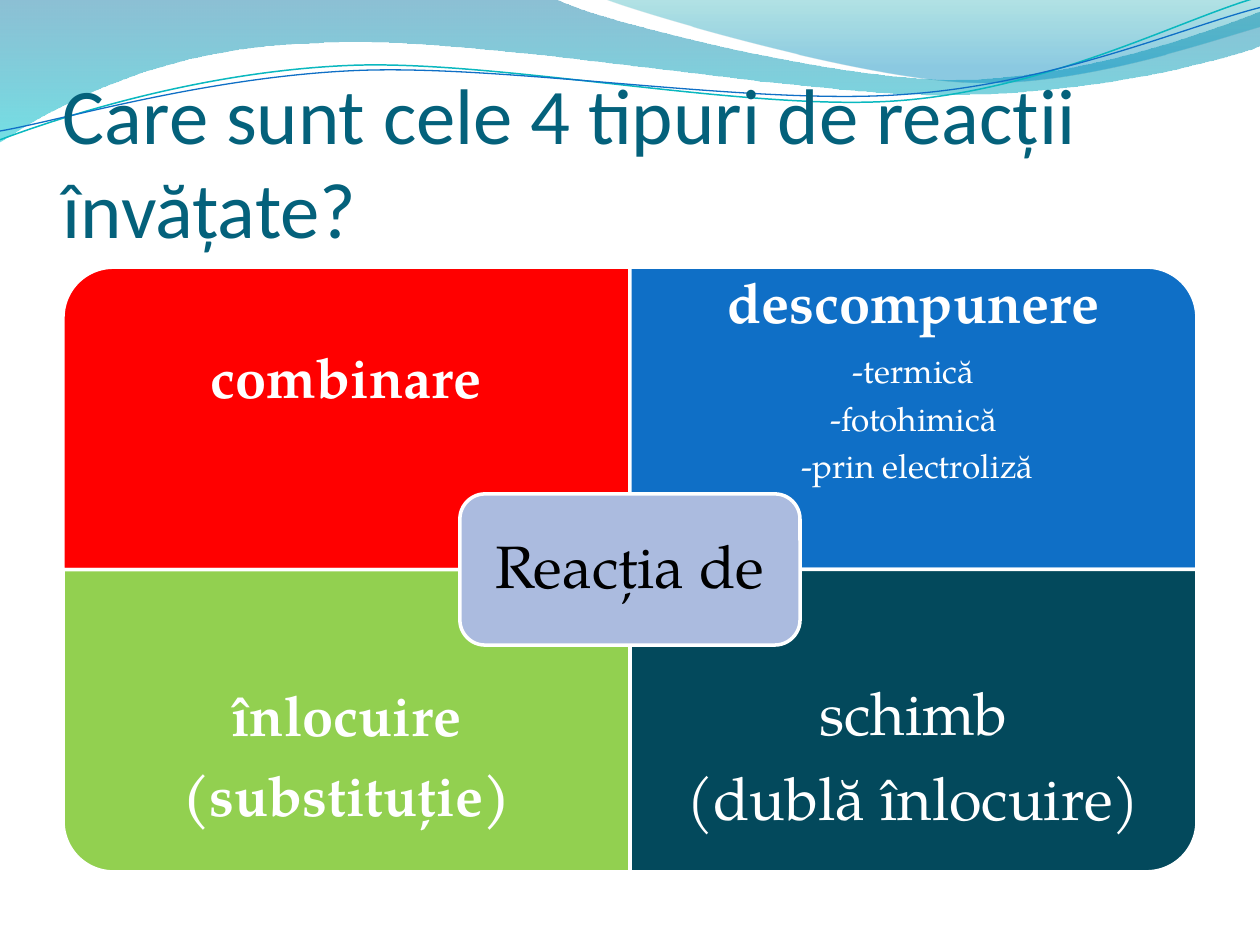
from dataclasses import dataclass

from lxml import etree
from pptx import Presentation
from pptx.dml.color import RGBColor
from pptx.enum.shapes import MSO_SHAPE
from pptx.enum.text import MSO_ANCHOR, PP_ALIGN
from pptx.oxml.ns import qn
from pptx.util import Inches, Pt

ROUND_ONE = MSO_SHAPE.ROUND_1_RECTANGLE
ROUND_ALL = MSO_SHAPE.ROUNDED_RECTANGLE
CENTER = PP_ALIGN.CENTER
MIDDLE, BOTTOM = MSO_ANCHOR.MIDDLE, MSO_ANCHOR.BOTTOM

WHITE = RGBColor(0xFF, 0xFF, 0xFF)
BLACK = RGBColor(0x00, 0x00, 0x00)
RED = RGBColor(0xFF, 0x00, 0x00)
BLUE = RGBColor(0x0F, 0x6F, 0xC6)
GREEN = RGBColor(0x92, 0xD0, 0x50)
DARK_TEAL = RGBColor(0x03, 0x49, 0x5C)
LAVENDER = RGBColor(0xAB, 0xBB, 0xDF)
TITLE_TEAL = RGBColor(0x04, 0x61, 0x7B)
WAVE_TEAL = RGBColor(0x0A, 0xB8, 0xBF)
BAND_BLUE = RGBColor(0x00, 0x74, 0xA1)
BAND_CYAN = RGBColor(0x00, 0xC6, 0xCF)
CREST_TEAL = RGBColor(0x00, 0xA1, 0xA9)
CREST_BLUE = RGBColor(0x00, 0x8B, 0xBF)

BODY_FONT = "TeX Gyre Pagella"
CENTER_X, CENTER_Y = 5, 4.52
QUAD_W, QUAD_H = 4.5, 2.4
LABEL_H = 1.8
HUB_W, HUB_H = 2.7, 1.2


@dataclass
class Stop:
    position: float
    color: RGBColor
    opacity: int


@dataclass
class Line:
    text: str
    size: int
    bold: bool = False


@dataclass
class Quadrant:
    column: int
    row: int
    rotation: int
    color: RGBColor
    inset: float
    lines: list[Line]


# A pair is a straight step to a point; six numbers are a cubic Bézier step.
BAND = [(0, 0), (4.4, -0.01), (4.76, 0.17, 6.64, 0.63, 7.58, 0.63),
        (8.53, 0.63, 9.58, 0.26, 10, 0.09), (10.01, 0.36),
        (9.83, 0.44, 8.7, 0.76, 7.46, 0.75), (6.22, 0.75, 3.82, 0.28, 2.57, 0.34),
        (1.29, 0.36, 0.46, 0.83, -0.01, 1.13), (0, 0)]
CREST = [(4.79, -0.01), (5.09, 0.11, 6.82, 0.62, 7.69, 0.65),
         (8.56, 0.69, 9.61, 0.32, 10, 0.21), (10, 0), (4.79, -0.01)]
TEAL_WAVE = [(0, 1.11), (0.48, 0.93, 1.58, 0.57, 2.77, 0.52),
             (3.95, 0.47, 5.93, 0.89, 7.13, 0.8), (8.33, 0.71, 9.38, 0.15, 9.98, -0.02)]
BLUE_WAVE = [(0, 1.04), (0.47, 0.96, 1.64, 0.61, 2.83, 0.56),
             (4.03, 0.51, 5.97, 0.84, 7.17, 0.75), (8.36, 0.67, 9.41, 0.21, 10, 0.06)]

QUADRANTS = [
    Quadrant(0, 0, 270, RED, 0.25, [Line("combinare", 32, True)]),
    Quadrant(1, 0, 0, BLUE, 0.25, [Line("descompunere", 32, True), Line("-termică", 19),
                                   Line("-fotohimică", 19), Line(" -prin electroliză", 19)]),
    Quadrant(0, 1, 180, GREEN, 0.25, [Line("înlocuire", 32, True),
                                      Line("(substituție)", 32, True)]),
    Quadrant(1, 1, 90, DARK_TEAL, 0.26, [Line("schimb", 34), Line("(dublă înlocuire)", 34)]),
]


def add_outline(shapes, steps: list[tuple], close: bool):
    """Build a freeform, then bend its Bézier steps with their control points."""
    points = [(Inches(step[-2]), Inches(step[-1])) for step in steps]
    builder = shapes.build_freeform(*points[0])
    builder.add_line_segments(points[1:], close=close)
    sp = builder.convert_to_shape()
    sp.shadow.inherit = False
    segments = list(sp.element.spPr.iter(qn("a:lnTo")))
    for segment, step in zip(segments, steps[1:]):
        if len(step) == 2:
            continue
        segment.tag = qn("a:cubicBezTo")
        for i in (0, 1):
            control = etree.Element(qn("a:pt"))
            control.set("x", str(Inches(step[2 * i]) - sp.left))
            control.set("y", str(Inches(step[2 * i + 1]) - sp.top))
            segment.insert(i, control)
    return sp


def add_gradient_area(shapes, steps: list[tuple], stops: list[Stop]) -> None:
    sp = add_outline(shapes, steps, True)
    sp.line.fill.background()
    sp.fill.gradient()
    sp.fill.gradient_angle = 270
    for target, stop in zip(sp.fill.gradient_stops, stops):
        target.position = stop.position
        target.color.rgb = stop.color
    for color, stop in zip(sp.element.spPr.iter(qn("a:srgbClr")), stops):
        etree.SubElement(color, qn("a:alpha")).set("val", str(stop.opacity * 1000))


def add_wave(shapes, steps: list[tuple], color: RGBColor, width: float) -> None:
    sp = add_outline(shapes, steps, False)
    sp.fill.background()
    sp.line.color.rgb = color
    sp.line.width = Pt(width)


def set_insets(tf, left: float, top: float, right: float, bottom: float) -> None:
    tf.margin_left, tf.margin_top = Inches(left), Inches(top)
    tf.margin_right, tf.margin_bottom = Inches(right), Inches(bottom)


def format_run(r, font: str, size: int, color: RGBColor, bold: bool = False) -> None:
    r.font.name, r.font.size, r.font.bold = font, Pt(size), bold
    r.font.color.rgb = color


def write_lines(tf, lines: list[Line], color: RGBColor, inset: float) -> None:
    tf.word_wrap = True
    tf.vertical_anchor = MIDDLE
    set_insets(tf, inset, inset, inset, inset)
    tf.text = "\n".join(line.text for line in lines)
    for p, line in zip(tf.paragraphs, lines):
        p.alignment = CENTER
        p.line_spacing = 0.9
        p.space_after = Pt(round(0.35 * line.size, 1))
        format_run(p.runs[0], BODY_FONT, line.size, color, line.bold)


def add_panel(shapes, kind, center: tuple, size: tuple, color: RGBColor):
    (cx, cy), (w, h) = center, size
    sp = shapes.add_shape(kind, Inches(cx - w / 2), Inches(cy - h / 2), Inches(w), Inches(h))
    sp.shadow.inherit = False
    sp.fill.solid()
    sp.fill.fore_color.rgb = color
    sp.line.color.rgb = WHITE
    sp.line.width = Pt(2)
    return sp


def add_quadrant(shapes, q: Quadrant) -> None:
    """Draw a panel with its outer corner rounded, and an upright label."""
    left = CENTER_X + (q.column - 1) * QUAD_W
    top = CENTER_Y + (q.row - 1) * QUAD_H
    size = (QUAD_H, QUAD_W) if q.rotation % 180 else (QUAD_W, QUAD_H)
    sp = add_panel(shapes, ROUND_ONE, (left + QUAD_W / 2, top + QUAD_H / 2), size, q.color)
    sp.rotation = q.rotation
    label_top = top + q.row * (QUAD_H - LABEL_H)
    label = shapes.add_textbox(Inches(left), Inches(label_top), Inches(QUAD_W), Inches(LABEL_H))
    write_lines(label.text_frame, q.lines, WHITE, q.inset)


def add_title(shapes, text: str) -> None:
    tf = shapes.add_textbox(Inches(0.5), Inches(0.77), Inches(9), Inches(1.25)).text_frame
    tf.word_wrap = True
    tf.vertical_anchor = BOTTOM
    set_insets(tf, 0, 0.05, 0, 0)
    tf.text = text
    format_run(tf.paragraphs[0].runs[0], "Calibri", 45, TITLE_TEAL)


def main() -> None:
    prs = Presentation()
    prs.slide_width, prs.slide_height = Inches(10), Inches(7.5)
    shapes = prs.slides.add_slide(prs.slide_layouts[6]).shapes

    add_gradient_area(shapes, BAND, [Stop(0, BAND_BLUE, 45), Stop(1, BAND_CYAN, 55)])
    add_gradient_area(shapes, CREST, [Stop(0, CREST_TEAL, 30), Stop(0.8, CREST_BLUE, 45)])
    add_wave(shapes, TEAL_WAVE, WAVE_TEAL, 0.85)
    add_wave(shapes, BLUE_WAVE, BLUE, 0.75)
    add_title(shapes, "Care sunt cele 4 tipuri de reacții învățate?")
    for quadrant in QUADRANTS:
        add_quadrant(shapes, quadrant)
    hub = add_panel(shapes, ROUND_ALL, (CENTER_X, CENTER_Y), (HUB_W, HUB_H), LAVENDER)
    write_lines(hub.text_frame, [Line("Reacția de", 34)], BLACK, 0.14)

    prs.save("out.pptx")


if __name__ == "__main__":
    main()
